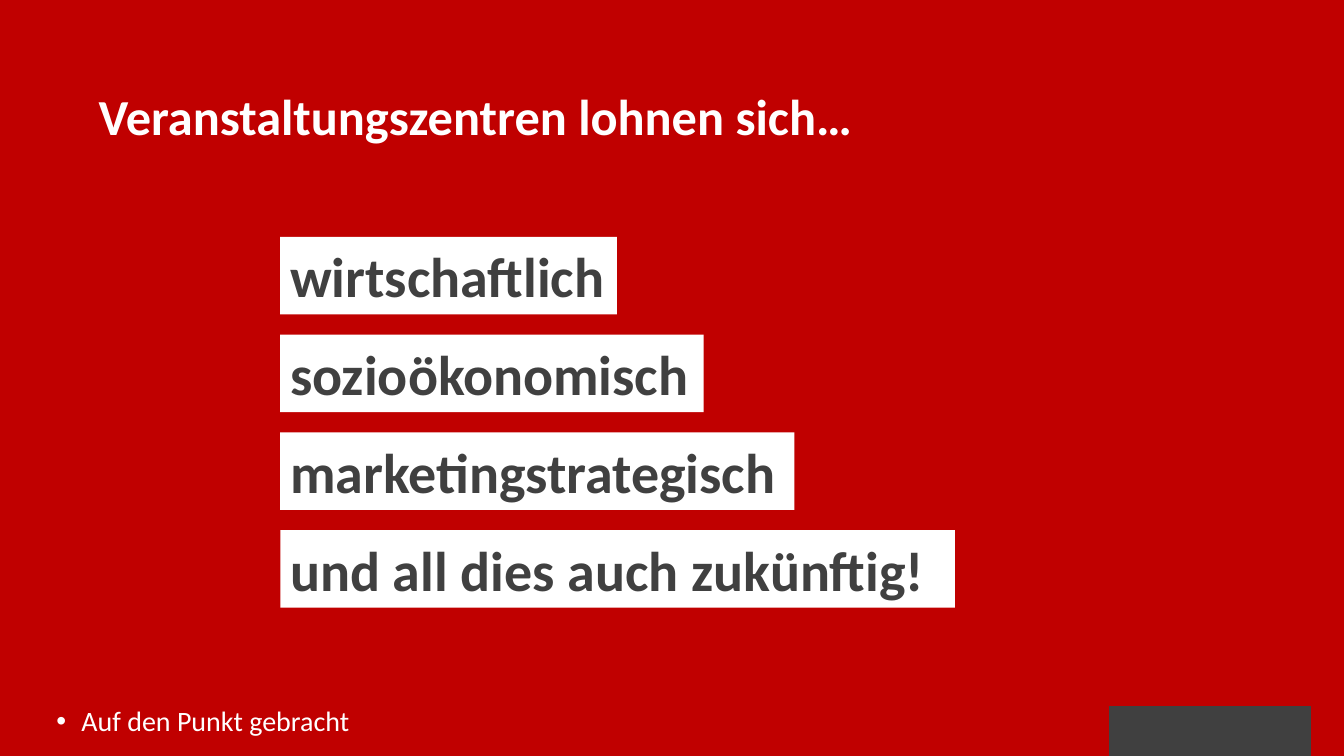
import pptx
import pptx.dml.color
import pptx.enum.shapes
import pptx.enum.text
import pptx.oxml
import pptx.oxml.ns
import pptx.util

WIDTH, HEIGHT = 13.33, 7.5
RED, GREY, WHITE = "C00000", "404040", "FFFFFF"
REASONS = [
    ("wirtschaftlich", 3.34),
    ("sozioökonomisch", 4.2),
    ("marketingstrategisch", 5.1),
    ("und all dies auch zukünftig!", 6.69),
]


def inches(*lengths):
    """Convert lengths in inches to slide units."""
    return [pptx.util.Inches(length) for length in lengths]


def paint(fill, color):
    """Give a fill a solid colour from a hex string."""
    fill.solid()
    fill.fore_color.rgb = pptx.dml.color.RGBColor.from_string(color)


def write(frame, text, size, color, bold=False):
    """Write one left-aligned run into a top-anchored text frame."""
    frame.word_wrap = True
    frame.vertical_anchor = pptx.enum.text.MSO_ANCHOR.TOP
    line = frame.paragraphs[0]
    line.alignment = pptx.enum.text.PP_ALIGN.LEFT
    run = line.add_run()
    run.text = text
    run.font.name = "Calibri"
    run.font.size = pptx.util.Pt(size)
    run.font.bold = bold
    paint(run.font.fill, color)
    return line


def add_corner(slide, left, top):
    """Draw the slanted grey panel in the bottom right corner."""
    outline = slide.shapes.build_freeform(left, top + 0.14, scale=pptx.util.Inches(1))
    outline.add_line_segments(
        [(WIDTH, top), (WIDTH, HEIGHT), (left + 0.06, HEIGHT)], close=True
    )
    corner = outline.convert_to_shape()
    corner.shadow.inherit = False
    paint(corner.fill, GREY)
    corner.line.fill.background()


def add_title(slide, left, top, width, height):
    """Place the headline."""
    title = slide.shapes.add_textbox(*inches(left, top, width, height))
    line = write(title.text_frame, "Veranstaltungszentren lohnen sich…", 36, WHITE, True)
    line.line_spacing = 0.9


def add_reasons(slide, left, top, height, pitch):
    """Stack the white labels at an equal pitch."""
    for row, (reason, width) in enumerate(REASONS):
        label = slide.shapes.add_shape(
            pptx.enum.shapes.MSO_SHAPE.RECTANGLE,
            *inches(left, top + row * pitch, width, height),
        )
        label.shadow.inherit = False
        paint(label.fill, WHITE)
        label.line.fill.background()
        write(label.text_frame, reason, 40, GREY, True)
        label.text_frame.auto_size = pptx.enum.text.MSO_AUTO_SIZE.SHAPE_TO_FIT_TEXT


def add_footer(slide, left, top, width, height):
    """Place the bulleted line at the bottom."""
    footer = slide.shapes.add_textbox(*inches(left, top, width, height))
    line = write(footer.text_frame, "Auf den Punkt gebracht", 20, WHITE)
    line.line_spacing = 0.9
    properties = line._p.get_or_add_pPr()
    indent = pptx.util.Inches(0.25)
    properties.set("marL", str(indent))
    properties.set("indent", str(-indent))
    namespace = pptx.oxml.ns.nsdecls("a")
    for bullet in ('buFont {} typeface="Arial"', 'buChar {} char="•"'):
        properties.append(pptx.oxml.parse_xml(f"<a:{bullet.format(namespace)}/>"))


def main():
    """Build and save the slide."""
    deck = pptx.Presentation()
    deck.slide_width, deck.slide_height = inches(WIDTH, HEIGHT)
    slide = deck.slides.add_slide(deck.slide_layouts[6])
    paint(slide.background.fill, RED)
    add_corner(slide, 11.32, 6.69)
    add_footer(slide, 0.46, 6.97, 11.35, 0.53)
    add_title(slide, 0.88, 0.86, 9.83, 0.79)
    add_reasons(slide, 2.78, 2.35, 0.77, 0.97)
    deck.save("out.pptx")


if __name__ == "__main__":
    main()
